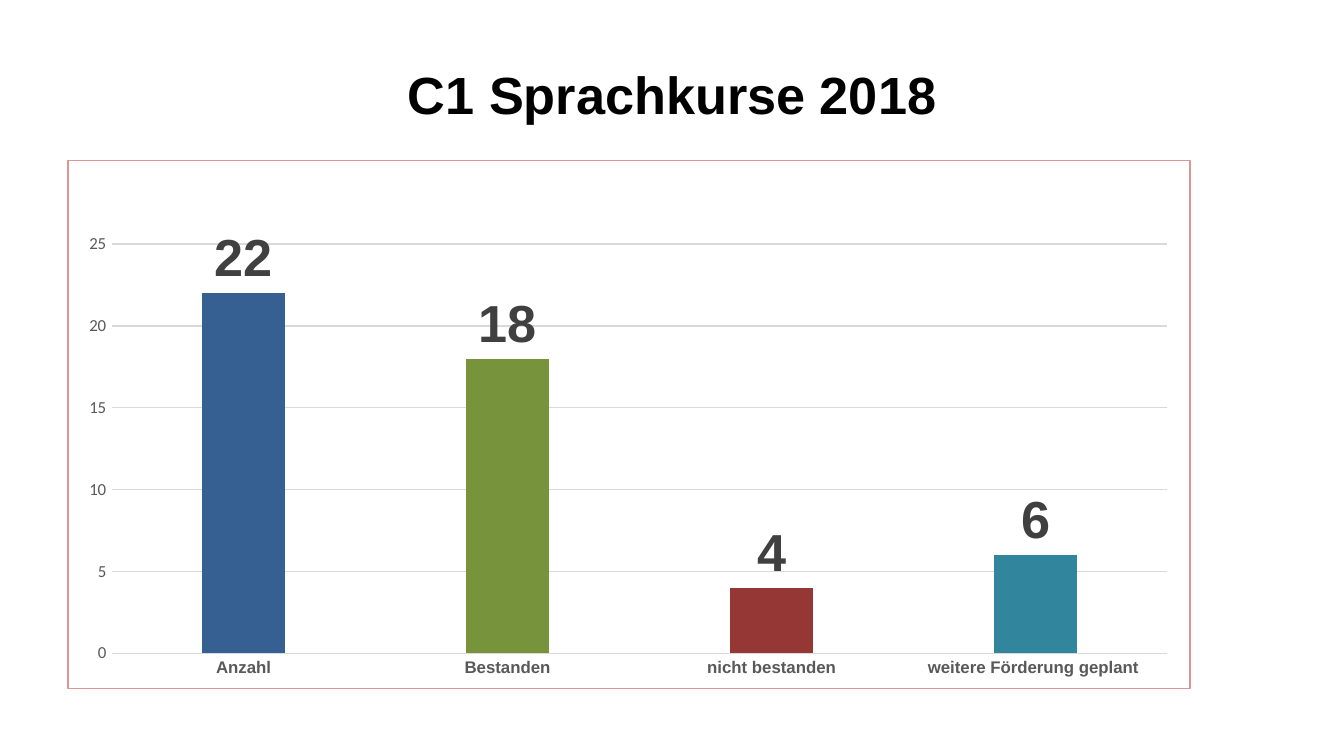
from pptx import Presentation
from pptx.chart.data import CategoryChartData
from pptx.dml.color import RGBColor
from pptx.enum.chart import XL_CHART_TYPE as ChartType
from pptx.enum.chart import XL_LABEL_POSITION as LabelPosition
from pptx.enum.chart import XL_TICK_MARK as TickMark
from pptx.enum.text import MSO_ANCHOR as Anchor
from pptx.enum.text import PP_ALIGN as Align
from pptx.oxml import parse_xml
from pptx.oxml.ns import nsdecls, qn
from pptx.util import Inches, Pt

RESULTS = {
    "Anzahl": (22, "376092"),
    "Bestanden": (18, "77933C"),
    "nicht bestanden": (4, "953735"),
    "weitere Förderung geplant ": (6, "31859C"),
}
GRID = "D9D9D9"
AXIS_TEXT = "595959"
PLOT_PERCENT = {"x": 3.9, "y": 15.8, "w": 94.1, "h": 77.5}


def color(value):
    """Turn a hex string into a colour."""
    return RGBColor.from_string(value)


def style_font(font, fill, **formats):
    """Set the colour and the given format values of a font."""
    for name, value in formats.items():
        setattr(font, name, value)
    font.color.rgb = color(fill)


def style_line(line, fill):
    """Give a line its colour and the common hairline width."""
    line.color.rgb = color(fill)
    line.width = Pt(0.75)


def add_title(page, text):
    """Add the centred headline."""
    box = page.shapes.add_textbox(Inches(0.5), Inches(0.23), Inches(9), Inches(0.94))
    frame = box.text_frame
    frame.word_wrap = True
    frame.vertical_anchor = Anchor.MIDDLE
    para = frame.paragraphs[0]
    para.alignment = Align.CENTER
    span = para.add_run()
    span.text = text
    style_font(span.font, "000000", name="Arial", size=Pt(28), bold=True)


def place_plot(chart):
    """Fix the inner plot area as fractions of the chart."""
    sizes = "".join(
        f'<c:{key} val="{percent / 100:.3f}"/>' for key, percent in PLOT_PERCENT.items()
    )
    layout = parse_xml(
        f'<c:layout {nsdecls("c")}><c:manualLayout><c:layoutTarget val="inner"/>'
        f'<c:xMode val="edge"/><c:yMode val="edge"/>{sizes}</c:manualLayout></c:layout>'
    )
    plot_area = chart._chartSpace.find(".//" + qn("c:plotArea"))
    for old in plot_area.findall(qn("c:layout")):
        plot_area.remove(old)
    plot_area.insert(0, layout)


def add_border(chart, fill):
    """Draw a thin frame around the chart."""
    border = parse_xml(
        f'<c:spPr {nsdecls("c", "a")}><a:noFill/><a:ln w="{Pt(0.75)}">'
        f'<a:solidFill><a:srgbClr val="{fill}"/></a:solidFill></a:ln></c:spPr>'
    )
    chart._chartSpace.find(qn("c:txPr")).addprevious(border)


def style_axes(chart):
    """Format both axes and the gridlines."""
    category, value = chart.category_axis, chart.value_axis
    for axis, name, bold in ((category, "Arial", True), (value, "Calibri", False)):
        axis.major_tick_mark = axis.minor_tick_mark = TickMark.NONE
        style_font(axis.tick_labels.font, AXIS_TEXT, name=name, size=Pt(9), bold=bold)
    style_line(category.format.line, GRID)
    value.format.line.fill.background()
    value.has_major_gridlines = True
    style_line(value.major_gridlines.format.line, GRID)
    for name, number in {"minimum_scale": 0, "maximum_scale": 25, "major_unit": 5}.items():
        setattr(value, name, number)


def style_columns(plot):
    """Colour each column and show its value above it."""
    plot.gap_width = 219
    plot.overlap = -27
    plot.vary_by_categories = False
    series = plot.series[0]
    for index, (_, fill) in enumerate(RESULTS.values()):
        column = series.points[index].format.fill
        column.solid()
        column.fore_color.rgb = color(fill)
    labels = series.data_labels
    labels.show_value = True
    labels.position = LabelPosition.OUTSIDE_END
    style_font(labels.font, "404040", name="Arial", size=Pt(28), bold=True)


def add_results_chart(page):
    """Add the column chart of the course results."""
    data = CategoryChartData()
    data.categories = list(RESULTS)
    data.add_series("Series 1", [number for number, _ in RESULTS.values()])
    chart = page.shapes.add_chart(
        ChartType.COLUMN_CLUSTERED,
        Inches(0.5), Inches(1.19), Inches(8.36), Inches(3.94), data,
    ).chart
    chart.has_title = False
    chart.has_legend = False
    style_font(chart.font, "000000", name="Calibri", size=Pt(10))
    style_axes(chart)
    style_columns(chart.plots[0])
    place_plot(chart)
    add_border(chart, "D99694")


def main():
    """Build and save the slide."""
    deck = Presentation()
    deck.slide_width = Inches(10)
    deck.slide_height = Inches(10 * 9 / 16)
    page = deck.slides.add_slide(deck.slide_layouts[6])
    add_title(page, "C1 Sprachkurse 2018")
    add_results_chart(page)
    deck.save("out.pptx")


if __name__ == "__main__":
    main()
